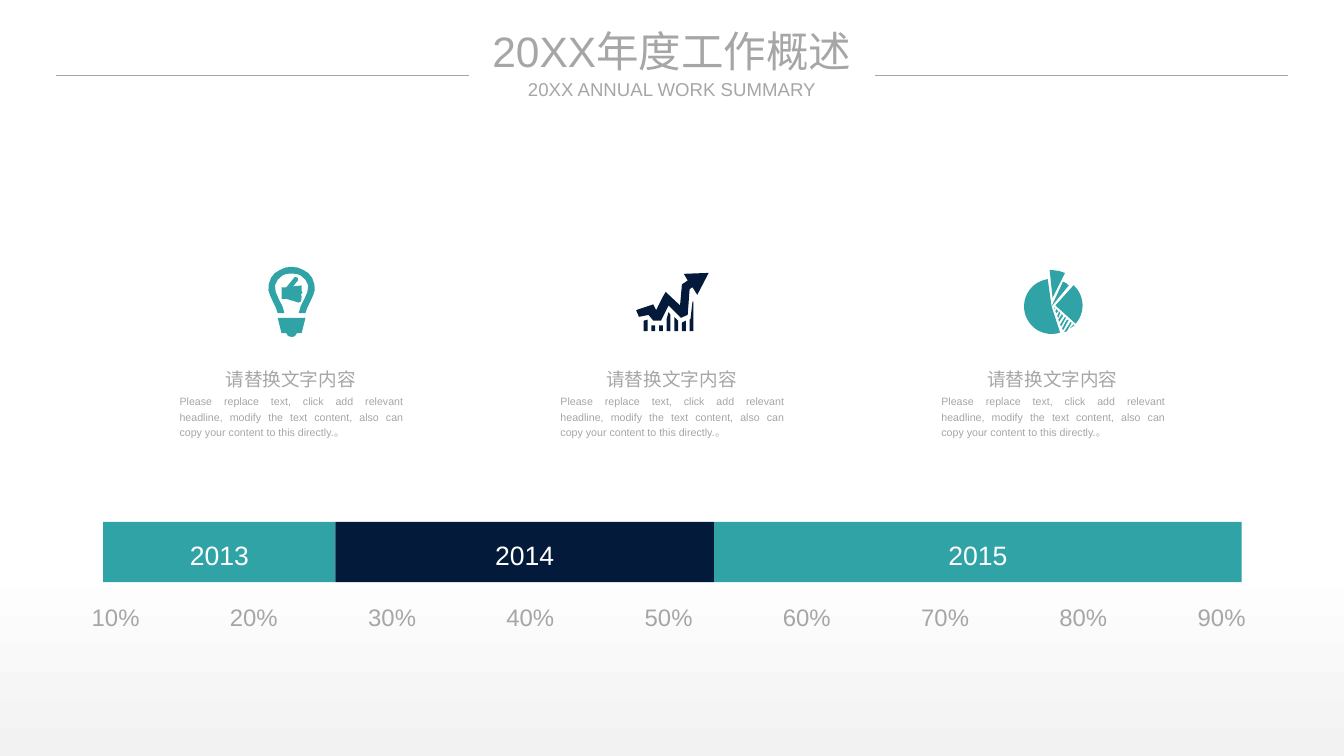
from dataclasses import dataclass
from math import cos, radians, sin

from lxml import etree
from pptx import Presentation, util as u
from pptx.dml.color import RGBColor
from pptx.enum import shapes, text
from pptx.oxml.ns import qn

TEAL = RGBColor(0x2F, 0xA3, 0xA5)
NAVY = RGBColor(0x04, 0x1A, 0x3B)
GREY = RGBColor(0xA6, 0xA6, 0xA6)
PALE = RGBColor(0xF2, 0xF2, 0xF2)
WHITE = RGBColor(0xFF, 0xFF, 0xFF)
FONT = "Arial"
ALIGN = text.PP_ALIGN

HEADING = "请替换文字内容"
BODY = ("Please replace text, click add relevant headline, modify the text content, "
        "also can copy your content to this directly.。")
YEARS = [("2013", 20.4, TEAL), ("2014", 33.25, NAVY), ("2015", 46.35, TEAL)]


@dataclass
class Box:
    left: int
    top: int
    width: int
    height: int

    def inner(self, x, y, w, h):
        """Return the inner box given in percent of this one."""
        return Box(int(self.left + self.width * x / 100), int(self.top + self.height * y / 100),
                   int(self.width * w / 100), int(self.height * h / 100))

    def edges(self):
        return self.left, self.top, self.width, self.height


def arc(cx, cy, radius, start, end, steps=24):
    angles = [radians(start + (end - start) * i / steps) for i in range(steps + 1)]
    return [(cx + radius * cos(a), cy + radius * sin(a)) for a in angles]


def bulb_outlines():
    """Glass ring mirrored about its axis, screw base and thumb."""
    outer = [(11, 49), (9, 43), (6, 37), (3, 30.5), (1.3, 25), (1.6, 19), (4, 12),
             (8, 7), (13, 4), (19, 1.3), (25.5, 0.6)]
    inside = [(18, 49), (16, 42), (12, 34), (9, 27), (8, 20), (11, 14), (16, 9.5),
              (20, 8), (25.5, 7.5)]

    def mirror(pts):
        return [(51 - x, y) for x, y in pts]

    ring = outer + mirror(outer)[::-1] + mirror(inside) + inside[::-1]
    base = [(11, 54), (40, 54), (36, 70), (31, 70), (29, 73), (26, 74), (22, 73),
            (20, 70), (15, 70)]
    thumb = [(36, 20), (36, 26), (37, 27), (36, 29), (35, 29), (36, 31), (36, 33),
             (35, 34), (36, 34), (35, 37), (33, 38), (20, 34), (15, 34), (15, 22),
             (20, 22), (29, 11), (32, 12), (32, 15), (27, 21)]
    return [ring, base, thumb]


def growth_outlines():
    """Zigzag arrow above a row of bars with slanted tops."""
    arrow = [(76, 0), (64, 23), (59, 15), (56, 17), (54, 44), (47, 47), (34, 34),
             (26, 50), (18, 50), (13, 44), (3, 46), (0, 39), (18, 33), (21, 39),
             (28, 25), (31, 20), (46, 34), (48, 12), (54, 8), (50, 1)]
    tops = [[(8, 50), (12, 49)], [(16, 55), (20, 55)], [(24, 55), (28, 55)],
            [(32, 48), (34, 41), (36, 44)], [(40, 46), (44, 50)], [(48, 52), (52, 50)],
            [(56, 49), (57, 48), (59, 30), (60, 30)]]
    return [arrow] + [[(top[0][0], 61), *top, (top[-1][0], 61)] for top in tops]


def pie_outlines():
    """Large sector, three lifted slices and a hatched slice."""
    sectors = [[(29, 38), *arc(29, 38, 28.8, 262, 72)],
               [(33, 37), *arc(33, 37, 28.4, -48, 42)],
               [(29, 38), (41, 12), (44, 13.5), (47, 16)],
               [(30, 29), (27, 0), (30, 0), (37, 1), (43, 3)]]
    hatches = [[(52, 57), (53, 58), (48, 61)],
               [(45, 64), (50, 55), (49, 54), (42, 65)],
               [(41, 63), (47, 52), (45, 52), (40, 61)],
               [(39, 59), (44, 50), (43, 49), (38, 57)],
               [(37, 54), (41, 48), (40, 46), (36, 52)],
               [(36, 50), (38, 45), (37, 43), (35, 48)],
               [(34, 45), (36, 43), (34, 41), (33, 43)],
               [(32, 41), (32, 39), (33, 40)]]
    return sectors + hatches


ICONS = [(bulb_outlines(), TEAL), (growth_outlines(), NAVY), (pie_outlines(), TEAL)]


def write(shape, words, size, color, align, spacing=1.2):
    p = shape.text_frame.paragraphs[0]
    p.text = words
    p.alignment = align
    p.line_spacing = spacing
    for r in p.runs:
        r.font.size = u.Pt(size)
        r.font.color.rgb = color
        r.font.name = FONT
        etree.SubElement(r.font._element, qn("a:ea"), typeface=FONT)


def add_text(s, box, words, size, align=ALIGN.JUSTIFY, wrap=True):
    tb = s.shapes.add_textbox(*box.edges())
    tb.text_frame.word_wrap = wrap
    tb.text_frame.auto_size = text.MSO_AUTO_SIZE.SHAPE_TO_FIT_TEXT
    write(tb, words, size, GREY, align)
    return tb


def add_rect(s, box):
    sp = s.shapes.add_shape(shapes.MSO_SHAPE.RECTANGLE, *box.edges())
    sp.shadow.inherit = False
    sp.line.fill.background()
    return sp


def backdrop(s, box):
    fill = add_rect(s, box).fill
    fill.gradient()
    fill.gradient_angle = 90
    for stop, color, position in zip(fill.gradient_stops, (PALE, WHITE), (0, 0.26)):
        stop.color.rgb = color
        stop.position = position


def header(s, box):
    titles = [(box.inner(33.2, 0, 33.6, 68), "20XX年度工作概述", 32),
              (box.inner(38.1, 70, 23.8, 30), "20XX ANNUAL WORK SUMMARY", 14)]
    for title_box, words, size in titles:
        tb = add_text(s, title_box, words, size, ALIGN.CENTER)
        tf = tb.text_frame
        tf.paragraphs[0].line_spacing = 1.0
        tf.vertical_anchor = text.MSO_ANCHOR.MIDDLE
        tf.margin_left = tf.margin_right = tf.margin_top = tf.margin_bottom = 0
    for x in (0, 66.46):
        rule = box.inner(x, 67, 33.54, 0)
        line = s.shapes.add_connector(shapes.MSO_CONNECTOR.STRAIGHT, rule.left, rule.top,
                                      rule.left + rule.width, rule.top)
        line.line.color.rgb = GREY
        line.line.width = u.Pt(1)
        etree.SubElement(line._element.spPr, qn("a:effectLst"))


def icon(s, box, outlines, color):
    """Draw outlines given in hundredths of an inch, centred in the box."""
    outlines = [[(10 * x, 10 * y) for x, y in pts] for pts in outlines]
    builder = s.shapes.build_freeform(*outlines[0][0], scale=u.Inches(1) / 1000)
    for i, pts in enumerate(outlines):
        if i:
            builder.move_to(*pts[0])
        builder.add_line_segments(pts[1:], close=True)
    sp = builder.convert_to_shape()
    sp.left = box.left + (box.width - sp.width) // 2
    sp.top = box.top + (box.height - sp.height) // 2
    sp.shadow.inherit = False
    sp.fill.solid()
    sp.fill.fore_color.rgb = color
    sp.line.fill.background()


def topic(s, box, outlines, color):
    icon(s, box.inner(0, 0, 100, 39.8), outlines, color)
    add_text(s, box.inner(18.9, 51.6, 62.2, 19.4), HEADING, 14, wrap=False)
    add_text(s, box.inner(0, 68.3, 100, 31.7), BODY, 8)


def year_bar(s, box):
    x = 0
    for year, share, color in YEARS:
        sp = add_rect(s, box.inner(x, 0, share, 100))
        sp.fill.solid()
        sp.fill.fore_color.rgb = color
        sp.text_frame.vertical_anchor = text.MSO_ANCHOR.MIDDLE
        write(sp, year, 20, WHITE, ALIGN.CENTER)
        x += share


def percent_scale(s, box, count=9, label=5.78):
    step = (100 - label) / (count - 1)
    for i in range(count):
        add_text(s, box.inner(i * step, 0, label, 100), f"{10 * (i + 1)}%", 18, wrap=False)


def main():
    prs = Presentation()
    prs.slide_width, prs.slide_height = u.Inches(14.06), u.Inches(7.91)
    s = prs.slides.add_slide(prs.slide_layouts[6])
    page = Box(0, 0, prs.slide_width, prs.slide_height)
    backdrop(s, page)
    percent_scale(s, page.inner(6.12, 78.38, 87.34, 5.44))
    year_bar(s, page.inner(7.68, 69.03, 84.71, 7.96))
    for i, (outlines, color) in enumerate(ICONS):
        topic(s, page.inner(12.66 + 28.34 * i, 35.27, 18.07, 23.51), outlines, color)
    header(s, page.inner(4.2, 3.29, 91.6, 9.99))
    prs.save("out.pptx")


if __name__ == "__main__":
    main()
